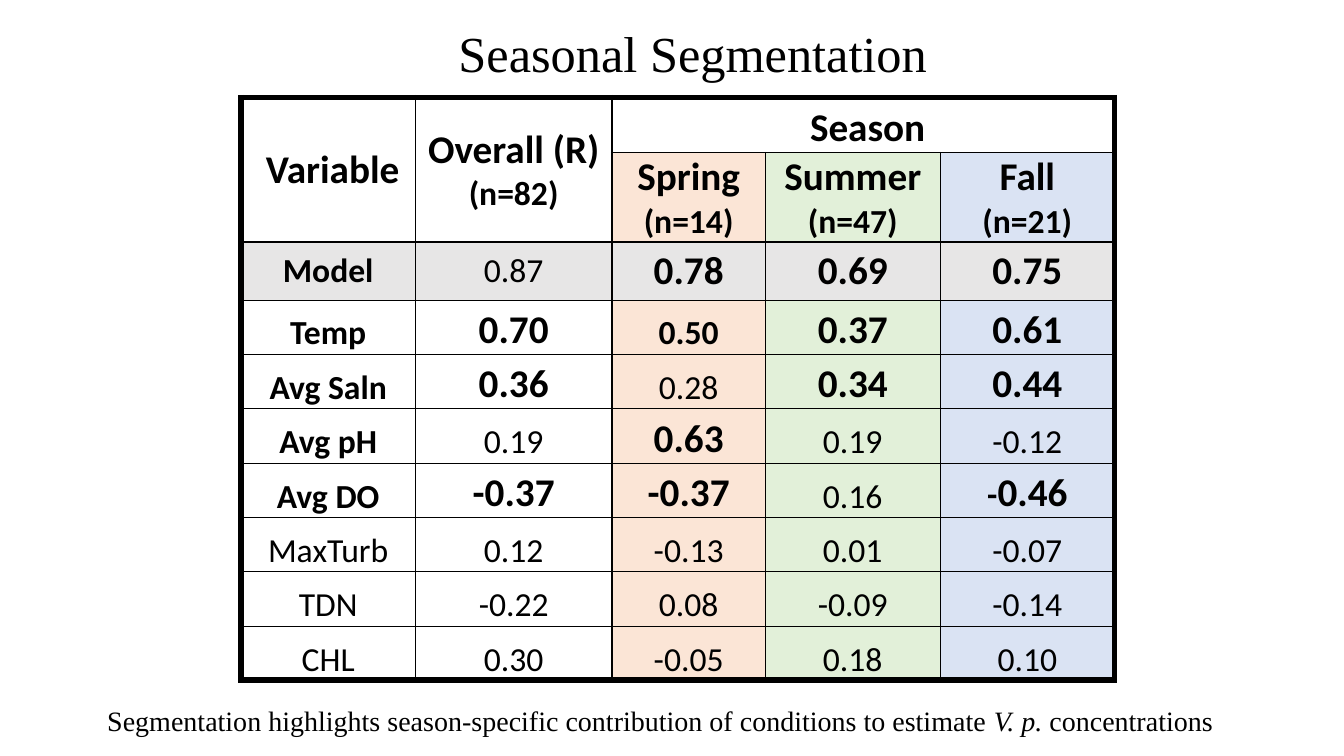
from lxml.etree import SubElement as add_node
from pptx import Presentation
from pptx.dml.color import RGBColor
from pptx.enum.text import MSO_ANCHOR as Anchor, PP_ALIGN as Align
from pptx.oxml.ns import qn
from pptx.util import Cm, Pt

BLACK = RGBColor(0x00, 0x00, 0x00)
GREY = RGBColor(0xE7, 0xE6, 0xE6)
PEACH = RGBColor(0xFB, 0xE5, 0xD6)
GREEN = RGBColor(0xE2, 0xF0, 0xD9)
BLUE = RGBColor(0xDA, 0xE3, 0xF3)
COLUMN_FILLS = [None, None, PEACH, GREEN, BLUE]

SERIF = "Times New Roman"
SANS = "Calibri"
STYLES = {
    "p": {"size": 24, "bold": False},
    "b": {"size": 24, "bold": True},
    "s": {"size": 28, "bold": True},
}

COLUMN_WIDTHS = [4.4, 4.95, 3.87, 4.4, 4.4]
ROW_HEIGHTS = [1.37, 2.25, 1.45] + [1.37] * 7
COLUMN_EDGES = [4.5, 1.5, 1.5, 0.25, 0.25, 4.5]
ROW_EDGES = [4.5, 0.25, 1.5] + [0.25] * 7 + [4.5]
NO_TABLE_STYLE = "{2D5ABB26-0587-4C30-8999-92F81FD0307C}"

HEADERS = [
    (0, 0, [[(" Variable", "s")]]),
    (0, 1, [[("Overall (R)", "s")], [("(n=82)", "b")]]),
    (0, 2, [[(" Season", "s")]]),
    (1, 2, [[("Spring ", "s"), ("(n=14)", "b")]]),
    (1, 3, [[("Summer", "s")], [("(n=47)", "b")]]),
    (1, 4, [[("Fall", "s")], [("(n=21)", "b")]]),
]
RESULTS = [
    (["Model", "0.87", "0.78", "0.69", "0.75"], "bpsss"),
    (["Temp", "0.70", "0.50", "0.37", "0.61"], "bsbss"),
    (["Avg Saln", "0.36", "0.28", "0.34", "0.44"], "bspss"),
    (["Avg pH", "0.19", "0.63", "0.19", "-0.12"], "bpspp"),
    (["Avg DO", "-0.37", "-0.37", "0.16", "-0.46"], "bssps"),
    (["MaxTurb", "0.12", "-0.13", "0.01", "-0.07"], "ppppp"),
    (["TDN", "-0.22", "0.08", "-0.09", "-0.14"], "ppppp"),
    (["CHL", "0.30", "-0.05", "0.18", "0.10"], "ppppp"),
]


def add_span(para, text, font=SANS, size=24, bold=False, italic=False):
    span = para.add_run()
    span.text = text
    span.font.name = font
    span.font.size = Pt(size)
    span.font.bold = bold
    span.font.italic = italic
    span.font.color.rgb = BLACK


def add_title(page, text):
    title = page.shapes.title
    title.left, title.top = Cm(11.3), Cm(0.43)
    title.width, title.height = Cm(13.46), Cm(1.8)
    para = title.text_frame.paragraphs[0]
    para.alignment = Align.LEFT
    add_span(para, text, font=SERIF, size=36)


def add_caption(page, parts):
    box = page.shapes.add_textbox(Cm(0.58), Cm(17.6), Cm(32.11), Cm(1.12))
    box.text_frame.word_wrap = True
    para = box.text_frame.paragraphs[0]
    para.alignment = Align.CENTER
    for text, italic in parts:
        add_span(para, text, font=SERIF, size=20, italic=italic)


def fill_cell(cell, paragraphs, anchor):
    cell.vertical_anchor = anchor
    for index, parts in enumerate(paragraphs):
        frame = cell.text_frame
        para = frame.add_paragraph() if index else frame.paragraphs[0]
        para.alignment = Align.CENTER
        for text, style in parts:
            add_span(para, text, **STYLES[style])


def draw_border(cell, side, weight):
    line = add_node(cell._tc.get_or_add_tcPr(), qn(f"a:ln{side}"), w=str(Pt(weight)))
    solid = add_node(line, qn("a:solidFill"))
    add_node(solid, qn("a:srgbClr"), val=str(BLACK))


def format_cell(cell, row, column):
    cell.margin_left = cell.margin_right = cell.margin_top = Cm(0.03)
    cell.margin_bottom = 0
    if not cell.is_spanned:
        height = cell.span_height if cell.is_merge_origin else 1
        width = cell.span_width if cell.is_merge_origin else 1
        draw_border(cell, "L", COLUMN_EDGES[column])
        draw_border(cell, "R", COLUMN_EDGES[column + width])
        draw_border(cell, "T", ROW_EDGES[row])
        draw_border(cell, "B", ROW_EDGES[row + height])
    color = {0: None, 2: GREY}.get(row, COLUMN_FILLS[column])
    if color is None:
        cell.fill.background()
    else:
        cell.fill.solid()
        cell.fill.fore_color.rgb = color


def add_season_table(page):
    table = page.shapes.add_table(
        len(ROW_HEIGHTS), len(COLUMN_WIDTHS), Cm(6.07), Cm(2.46),
        Cm(sum(COLUMN_WIDTHS)), Cm(sum(ROW_HEIGHTS)),
    ).table
    table.first_row = table.horz_banding = False
    table._tbl.tblPr.find(qn("a:tableStyleId")).text = NO_TABLE_STYLE
    for column, width in zip(table.columns, COLUMN_WIDTHS):
        column.width = Cm(width)
    for row, height in zip(table.rows, ROW_HEIGHTS):
        row.height = Cm(height)

    for first, last in [((0, 0), (1, 0)), ((0, 1), (1, 1)), ((0, 2), (0, 4))]:
        table.cell(*first).merge(table.cell(*last))
    for row in range(len(ROW_HEIGHTS)):
        for column in range(len(COLUMN_WIDTHS)):
            format_cell(table.cell(row, column), row, column)

    for row, column, paragraphs in HEADERS:
        anchor = Anchor.BOTTOM if (row, column) == (0, 2) else Anchor.MIDDLE
        fill_cell(table.cell(row, column), paragraphs, anchor)
    for row, (texts, styles) in enumerate(RESULTS, start=2):
        anchor = Anchor.MIDDLE if row == 2 else Anchor.BOTTOM
        for column, part in enumerate(zip(texts, styles)):
            parts = [("-", "b"), ("0.46", "s")] if part[0] == "-0.46" else [part]
            fill_cell(table.cell(row, column), [parts], anchor)


def main():
    deck = Presentation()
    deck.slide_width, deck.slide_height = Cm(33.87), Cm(19.05)
    page = deck.slides.add_slide(deck.slide_layouts[5])
    add_title(page, "Seasonal Segmentation")
    add_season_table(page)
    add_caption(page, [
        ("Segmentation highlights season-specific contribution of conditions to estimate ", False),
        ("V. p.", True),
        (" concentrations", False),
    ])
    deck.save("out.pptx")


if __name__ == "__main__":
    main()
